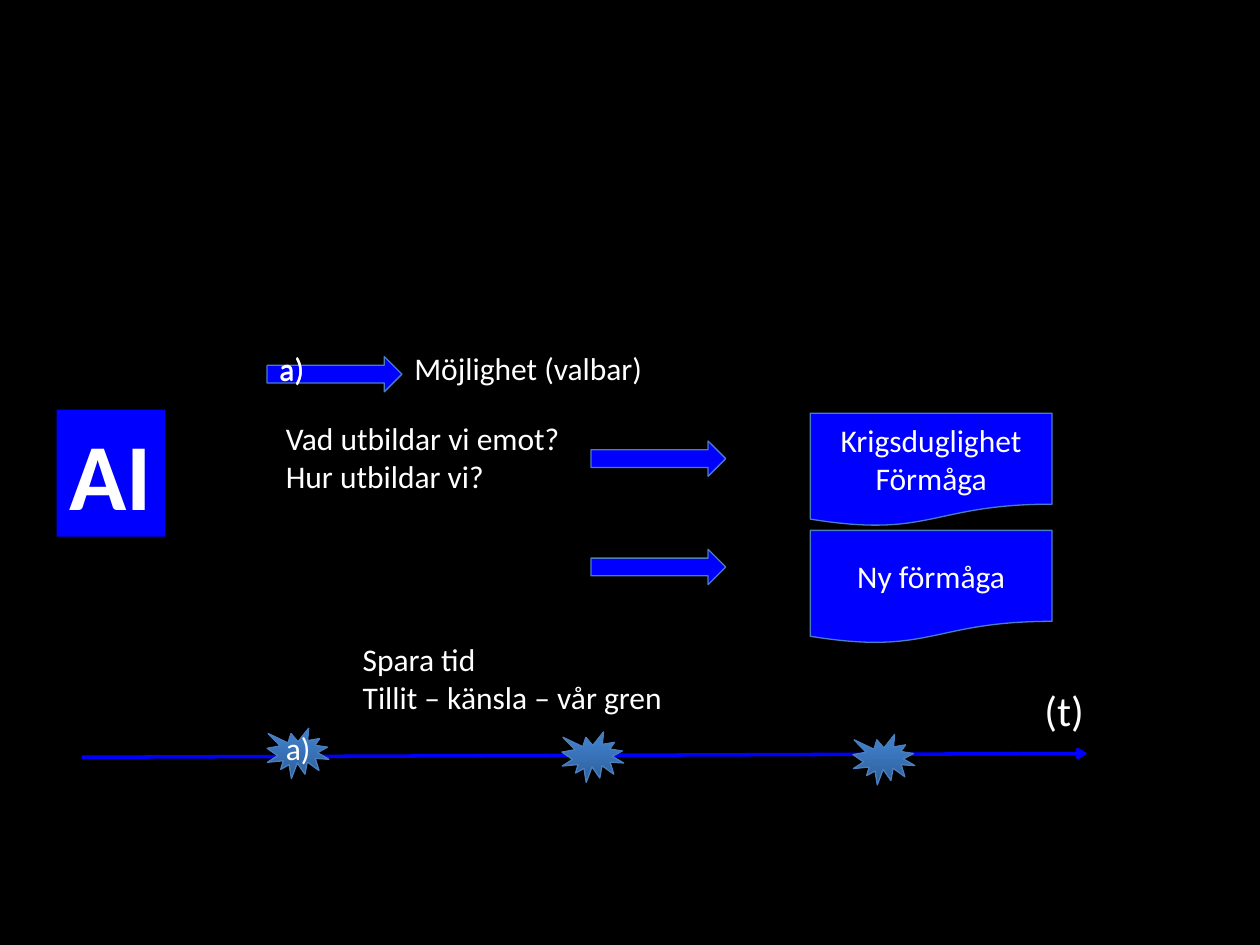
from lxml import etree
from pptx import Presentation
from pptx.dml.color import RGBColor
from pptx.enum.shapes import MSO_CONNECTOR, MSO_SHAPE
from pptx.enum.text import MSO_ANCHOR, MSO_AUTO_SIZE, PP_ALIGN
from pptx.oxml.ns import qn
from pptx.util import Inches, Pt

RECTANGLE = MSO_SHAPE.RECTANGLE
RIGHT_ARROW = MSO_SHAPE.RIGHT_ARROW
DOCUMENT = MSO_SHAPE.FLOWCHART_DOCUMENT
BURST = MSO_SHAPE.EXPLOSION1
STRAIGHT = MSO_CONNECTOR.STRAIGHT
TOP, MIDDLE = MSO_ANCHOR.TOP, MSO_ANCHOR.MIDDLE
LEFT, CENTER = PP_ALIGN.LEFT, PP_ALIGN.CENTER
GROW = MSO_AUTO_SIZE.SHAPE_TO_FIT_TEXT

BLACK, WHITE, BLUE, EDGE = "000000", "FFFFFF", "0000FF", "4B7EBC"
BURST_DARK, BURST_LIGHT = "2F5F99", "3D7CC7"


def rgb(value):
    """Turn a hex string into a colour."""
    return RGBColor.from_string(value)


def write(frame, lines, size=18, align=LEFT, bold=False):
    """Fill a text frame with one paragraph per line."""
    frame.text = "\n".join(lines)
    for paragraph in frame.paragraphs:
        paragraph.alignment = align
        font = paragraph.font
        font.name, font.size, font.bold = "Calibri", Pt(size), bold
        font.color.rgb = rgb(WHITE)


def add_label(slide, left, top, width, height, lines, size=18, wrap=False):
    """Add a plain text box that grows with its text."""
    box = slide.shapes.add_textbox(*map(Inches, (left, top, width, height)))
    box.text_frame.word_wrap = wrap
    box.text_frame.auto_size = GROW
    write(box.text_frame, lines, size)


def add_block(slide, kind, left, top, width, height):
    """Add a blue preset shape with a thin edge."""
    block = slide.shapes.add_shape(kind, *map(Inches, (left, top, width, height)))
    block.shadow.inherit = False
    block.fill.solid()
    block.fill.fore_color.rgb = rgb(BLUE)
    block.line.color.rgb = rgb(EDGE)
    block.line.width = Pt(0.75)
    return block


def add_ai_tile(slide):
    """Add the square tile that names the subject."""
    tile = add_block(slide, RECTANGLE, 0.45, 3.25, 0.86, 1.01)
    tile.line.fill.background()
    frame = tile.text_frame
    frame.word_wrap = False
    frame.auto_size = GROW
    frame.vertical_anchor = TOP
    write(frame, ["AI"], 54, CENTER, True)


def add_outcome(slide, top, text):
    """Add a document shape that holds an outcome."""
    outcome = add_block(slide, DOCUMENT, 6.43, top, 1.92, 0.9)
    outcome.text_frame.vertical_anchor = MIDDLE
    write(outcome.text_frame, [text], align=CENTER)


def add_milestone(slide, left, top):
    """Add a burst with a gradient that darkens downwards."""
    fill = add_block(slide, BURST, left, top, 0.49, 0.4).fill
    fill.gradient()
    fill.gradient_angle = 90
    stops = zip(fill.gradient_stops, (0, 0.8), (BURST_DARK, BURST_LIGHT))
    for stop, position, color in stops:
        stop.position = position
        stop.color.rgb = rgb(color)


def add_time_axis(slide):
    """Add the time line with an arrowhead at its end."""
    axis = slide.shapes.add_connector(
        STRAIGHT, *map(Inches, (0.65, 6.01, 8.63, 5.98)))
    axis.line.color.rgb = rgb(BLUE)
    axis.line.width = Pt(2)
    properties = axis.element.spPr
    etree.SubElement(properties.find(qn("a:ln")), qn("a:tailEnd"), type="arrow")
    etree.SubElement(properties, qn("a:effectLst"))


def main():
    """Build the slide and save it."""
    deck = Presentation()
    deck.slide_width, deck.slide_height = Inches(10), Inches(7.5)
    slide = deck.slides.add_slide(deck.slide_layouts[6])
    slide.background.fill.solid()
    slide.background.fill.fore_color.rgb = rgb(BLACK)

    add_ai_tile(slide)
    add_label(slide, 3.19, 2.72, 2.03, 0.4, ["Möjlighet (valbar)"])
    for left, top in ((2.12, 2.83), (4.69, 3.5), (4.69, 4.36)):
        add_block(slide, RIGHT_ARROW, left, top, 1.07, 0.28)

    add_time_axis(slide)
    for left, top in ((2.12, 5.78), (4.46, 5.81), (6.77, 5.83)):
        add_milestone(slide, left, top)
    add_label(slide, 8.19, 5.38, 0.52, 0.5, ["(t)"], 24)
    for left, top in ((2.12, 2.73), (2.12, 2.72), (2.17, 5.74)):
        add_label(slide, left, top, 0.4, 0.4, ["a)"], wrap=True)

    add_label(slide, 2.17, 3.28, 2.41, 0.71,
              ["Vad utbildar vi emot?", "Hur utbildar vi?"])
    add_outcome(slide, 3.28, "Krigsduglighet Förmåga")
    add_outcome(slide, 4.21, "Ny förmåga")
    add_label(slide, 2.78, 5.03, 2.61, 0.71,
              ["Spara tid", "Tillit – känsla – vår gren"])
    deck.save("out.pptx")


if __name__ == "__main__":
    main()
